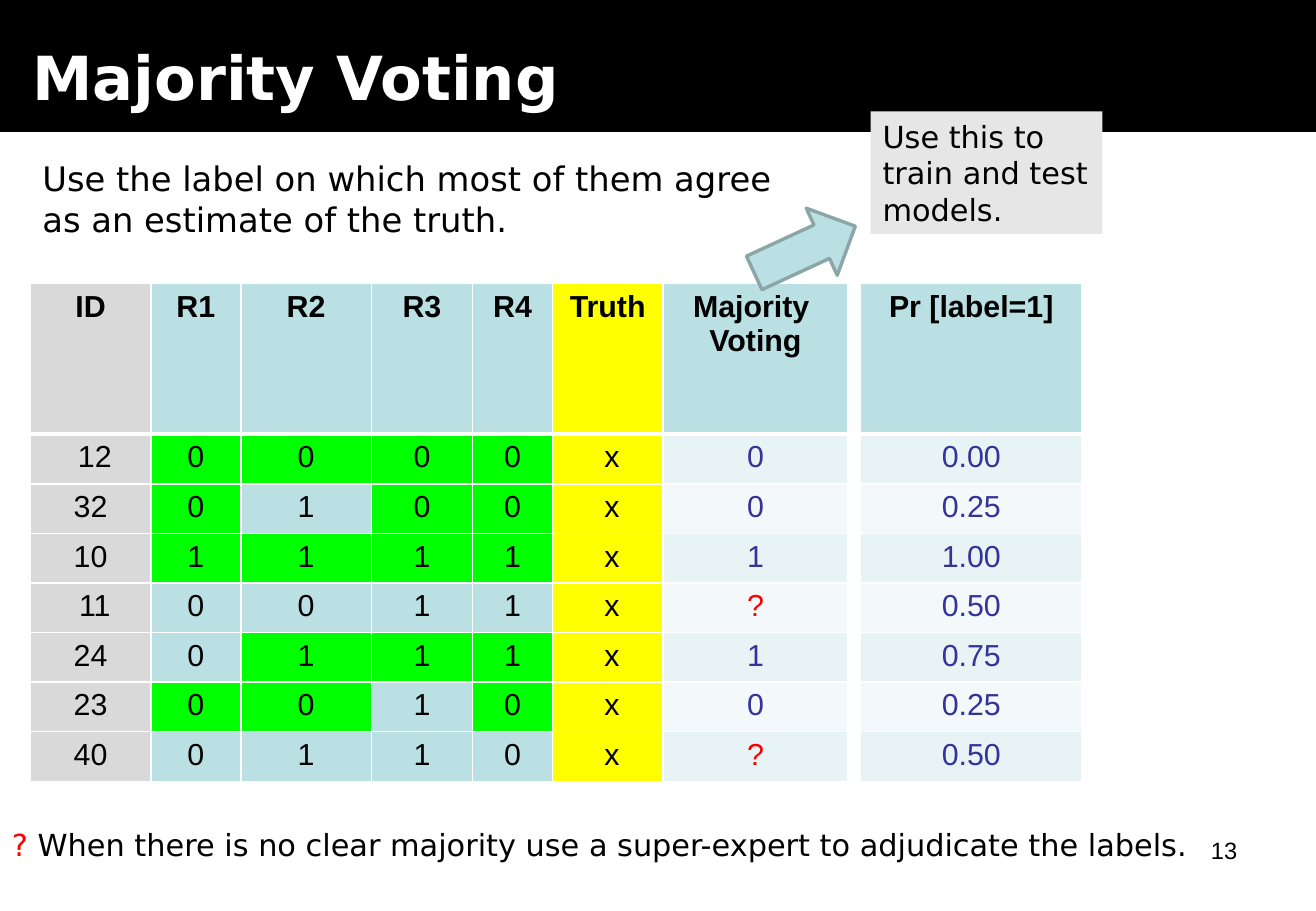
from dataclasses import dataclass

from lxml import etree
from pptx import Presentation
from pptx.dml.color import RGBColor
from pptx.enum.shapes import MSO_SHAPE
from pptx.enum.text import MSO_ANCHOR, MSO_AUTO_SIZE, PP_ALIGN
from pptx.oxml.ns import qn
from pptx.util import Pt

RECTANGLE, RIGHT_ARROW = MSO_SHAPE.RECTANGLE, MSO_SHAPE.RIGHT_ARROW
LEFT, CENTER, RIGHT = PP_ALIGN.LEFT, PP_ALIGN.CENTER, PP_ALIGN.RIGHT
MIDDLE = MSO_ANCHOR.MIDDLE
NO_AUTOFIT = MSO_AUTO_SIZE.NONE

EMU_PER_PX = 7620  # 120 px to the inch
SLIDE_SIZE = (1300, 900)


@dataclass(frozen=True)
class Theme:
    heading_font: str = "DejaVu Sans"
    table_font: str = "Arial"
    title_size: int = 36
    lead_size: int = 20
    text_size: int = 18
    number_size: int = 14
    black: str = "000000"
    white: str = "FFFFFF"
    result: str = "333399"
    unclear: str = "FF0000"
    identifier: str = "D9D9D9"
    label: str = "BBE0E3"
    agreement: str = "00FF00"
    truth: str = "FFFF00"
    bands: tuple = ("E7F3F4", "F3F9FA")
    callout: str = "E6E6E6"
    arrow_line: str = "8AA6A8"


THEME = Theme()

HEADERS = ["ID", "R1", "R2", "R3", "R4", "Truth", "Majority \nVoting"]
COLUMN_WIDTHS = [119, 89, 129, 100, 79, 109, 183]
HEADER_HEIGHT, ROW_HEIGHT = 149, 49
VOTES = [
    (" 12", (0, 0, 0, 0)),
    ("32", (0, 1, 0, 0)),
    ("10", (1, 1, 1, 1)),
    (" 11", (0, 0, 1, 1)),
    ("24", (0, 1, 1, 1)),
    ("23", (0, 0, 1, 0)),
    ("40", (0, 1, 1, 0)),
]


def px(*lengths):
    return [length * EMU_PER_PX for length in lengths]


def rgb(color):
    return RGBColor.from_string(color)


def format_text(text_frame, size, color=THEME.black, font=THEME.heading_font,
                bold=False, align=LEFT):
    for paragraph in text_frame.paragraphs:
        paragraph.alignment = align
        for run in paragraph.runs:
            run.font.name = font
            run.font.size = Pt(size)
            run.font.bold = bold
            run.font.color.rgb = rgb(color)


def add_text(slide, box, text, size, **style):
    text_frame = slide.shapes.add_textbox(*px(*box)).text_frame
    text_frame.word_wrap = True
    text_frame.text = text
    format_text(text_frame, size, **style)
    return text_frame


def add_filled_shape(slide, kind, box, fill, line=None, line_width=1):
    shape = slide.shapes.add_shape(kind, *px(*box))
    shape.shadow.inherit = False
    shape.fill.solid()
    shape.fill.fore_color.rgb = rgb(fill)
    if line:
        shape.line.color.rgb = rgb(line)
        shape.line.width = Pt(line_width)
    else:
        shape.line.fill.background()
    return shape


def add_title_band(slide, box):
    left, top, width, height = box
    band = add_filled_shape(slide, RECTANGLE, box, THEME.black, THEME.black, 0.75)
    slide.shapes._spTree.insert(2, band._element)  # behind the title
    title = slide.shapes.title
    title.left, title.top, title.width, title.height = px(
        left + 20, top, width - 87, height + 20)
    text_frame = title.text_frame
    text_frame.text = "Majority Voting"
    text_frame.auto_size = NO_AUTOFIT
    text_frame.vertical_anchor = MIDDLE
    format_text(text_frame, THEME.title_size, THEME.white, bold=True)


def set_borders(cell, widths):
    properties = cell._tc.get_or_add_tcPr()
    for side, width in zip("LRTB", widths):
        line = etree.SubElement(properties, qn(f"a:ln{side}"), w=str(Pt(width)))
        fill = etree.SubElement(line, qn("a:solidFill"))
        etree.SubElement(fill, qn("a:srgbClr"), val=THEME.white)


def fill_cell(cell, text, fill, color, row):
    cell.text = text
    format_text(cell.text_frame, THEME.text_size, color, THEME.table_font,
                bold=row == 0, align=CENTER)
    set_borders(cell, (1, 1, 3 if row == 1 else 1, 3 if row == 0 else 1))
    cell.fill.solid()
    cell.fill.fore_color.rgb = rgb(fill)


def add_label_table(slide, position, widths, rows):
    """Each row is a list of (text, fill, color); the first is the header."""
    heights = [HEADER_HEIGHT] + [ROW_HEIGHT] * (len(rows) - 1)
    table = slide.shapes.add_table(
        len(rows), len(widths), *px(*position, sum(widths), sum(heights))).table
    for column, width in zip(table.columns, px(*widths)):
        column.width = width
    for table_row, height in zip(table.rows, px(*heights)):
        table_row.height = height
    for row, cells in enumerate(rows):
        for column, (text, fill, color) in enumerate(cells):
            fill_cell(table.cell(row, column), text, fill, color, row)


def vote_rows():
    fills = [THEME.identifier] + [THEME.label] * 4 + [THEME.truth, THEME.label]
    rows = [[(text, fill, THEME.black) for text, fill in zip(HEADERS, fills)]]
    for index, (identifier, votes) in enumerate(VOTES):
        share = sum(votes) / len(votes)
        majority = None if share == 0.5 else round(share)
        verdict = "?" if majority is None else str(majority)
        color = THEME.unclear if majority is None else THEME.result
        rows.append(
            [(identifier, THEME.identifier, THEME.black)]
            + [(str(vote), THEME.agreement if vote == majority else THEME.label,
                THEME.black) for vote in votes]
            + [(" x", THEME.truth, THEME.black),
               (verdict, THEME.bands[index % 2], color)])
    return rows


def probability_rows():
    rows = [[("Pr [label=1]", THEME.label, THEME.black)]]
    for index, (_, votes) in enumerate(VOTES):
        share = sum(votes) / len(votes)
        rows.append([(f"{share:.2f}", THEME.bands[index % 2], THEME.result)])
    return rows


def add_callout(slide, box):
    left, top, _, _ = box
    arrow = add_filled_shape(slide, RIGHT_ARROW, (left - 120, top + 100, 110, 73),
                             THEME.label, THEME.arrow_line, 2)
    arrow.rotation = 335.2
    callout = add_filled_shape(slide, RECTANGLE, box, THEME.callout)
    text_frame = callout.text_frame
    text_frame.word_wrap = False
    text_frame.text = "Use this to\ntrain and test\nmodels."
    format_text(text_frame, THEME.text_size)


def add_footnote(slide, box):
    text_frame = add_text(slide, box, "?", THEME.text_size, color=THEME.unclear)
    paragraph = text_frame.paragraphs[0]
    note = paragraph.add_run()
    note.text = (" When there is no clear majority use a super-expert"
                 " to adjudicate the labels.")
    note.font.name = THEME.heading_font
    note.font.size = Pt(THEME.text_size)
    note.font.color.rgb = rgb(THEME.black)


def build_voting_slide(presentation):
    slide = presentation.slides.add_slide(presentation.slide_layouts[5])
    add_title_band(slide, (0, 0, 1300, 130))
    add_text(slide, (930, 820, 304, 62), "13", THEME.number_size,
             font=THEME.table_font, align=RIGHT)
    add_text(slide, (30, 150, 750, 92),
             "Use the label on which most of them agree as an estimate of the truth.",
             THEME.lead_size)
    add_label_table(slide, (30, 280), COLUMN_WIDTHS, vote_rows())
    add_footnote(slide, (0, 810, 1240, 48))
    add_callout(slide, (860, 110, 229, 121))
    add_label_table(slide, (850, 280), [219], probability_rows())


def main():
    presentation = Presentation()
    presentation.slide_width, presentation.slide_height = px(*SLIDE_SIZE)
    build_voting_slide(presentation)
    presentation.save("out.pptx")


if __name__ == "__main__":
    main()
